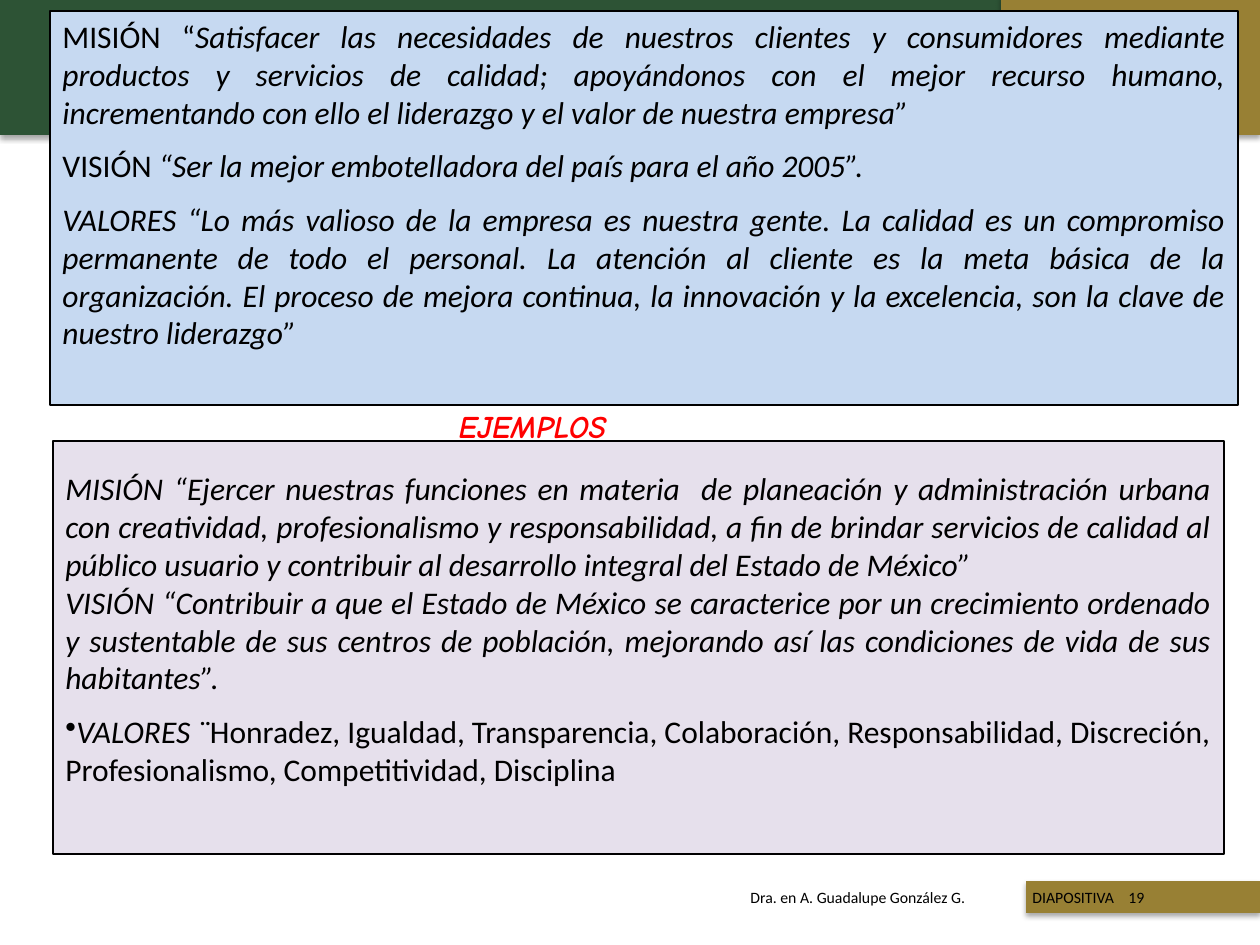
from lxml.etree import SubElement
from pptx import Presentation
from pptx.dml.color import RGBColor
from pptx.enum.shapes import MSO_SHAPE as SHAPE
from pptx.enum.text import MSO_ANCHOR as ANCHOR, PP_ALIGN as ALIGN
from pptx.oxml.ns import qn
from pptx.util import Emu, Pt

SCALE = 914400 / 126
GREEN, OCHRE, BLUE, LILAC = "2D5335", "988034", "C6D9F1", "E6E0EC"
BLACK, RED = "000000", "FF0000"

# Each paragraph: alignment, space before in points, bullet, (text, italic) runs
COMPANY = [
    (ALIGN.JUSTIFY, 9, None, [
        ("MISIÓN “", False),
        ("Satisfacer las necesidades de nuestros clientes y consumidores "
         "mediante productos y servicios de calidad; apoyándonos con el mejor "
         "recurso humano, incrementando con ello el liderazgo y el valor de "
         "nuestra empresa”", True)]),
    (ALIGN.JUSTIFY, 9, None, [
        ("VISIÓN ", False),
        ("“Ser la mejor embotelladora del país para el año 2005”.", True)]),
    (ALIGN.JUSTIFY, 9, None, [
        ("VALORES “Lo más valioso de la empresa es nuestra gente. La calidad "
         "es un compromiso permanente de todo el personal. La atención al "
         "cliente es la meta básica de la organización. El proceso de mejora "
         "continua, la innovación y la excelencia, son la clave de nuestro "
         "liderazgo”", True)]),
]
AGENCY = [
    (ALIGN.JUSTIFY, 0, None, [
        ("MISIÓN “Ejercer nuestras funciones en materia  de planeación y "
         "administración urbana con creatividad, profesionalismo y "
         "responsabilidad, a fin de brindar servicios de calidad al público "
         "usuario y contribuir al desarrollo integral del Estado de México”",
         True)]),
    (ALIGN.JUSTIFY, 0, None, [
        ("VISIÓN “Contribuir a que el Estado de México se caracterice por un "
         "crecimiento ordenado y sustentable de sus centros de población, "
         "mejorando así las condiciones de vida de sus habitantes”.", True)]),
    (ALIGN.LEFT, 9, "•", [
        ("VALORES ¨", True),
        ("Honradez, Igualdad, Transparencia, Colaboración, Responsabilidad, "
         "Discreción, Profesionalismo, Competitividad, Disciplina", False)]),
]


def px(length):
    return Emu(round(length * SCALE))


def color(hex_string):
    return RGBColor.from_string(hex_string)


def style(font, size, hex_string, name="Calibri"):
    font.name, font.size = name, Pt(size)
    font.color.rgb = color(hex_string)


def add_panel(slide, box, fill):
    panel = slide.shapes.add_shape(SHAPE.RECTANGLE, *map(px, box))
    panel.shadow.inherit = False
    panel.fill.solid()
    panel.fill.fore_color.rgb = color(fill)
    panel.line.fill.background()
    return panel


def add_band(slide, box, fill):
    """Plain coloured band with a soft shadow below it."""
    band = add_panel(slide, box, fill)
    effects = band.element.spPr.find(qn("a:effectLst"))
    shadow = SubElement(effects, qn("a:outerShdw"), blurRad=str(Pt(3.1)),
                        dist=str(Pt(1.8)), dir="5400000", rotWithShape="0")
    tint = SubElement(shadow, qn("a:srgbClr"), val=BLACK)
    SubElement(tint, qn("a:alpha"), val="35000")


def add_header(slide, box):
    left, top, width, height = box
    green_width = 1001
    add_band(slide, (left, top, green_width, height), GREEN)
    add_band(slide, (left + green_width, top, width - green_width, height), OCHRE)


def add_footer(slide, box):
    left, top, width, height = box
    band_left = 288
    add_band(slide, (left + band_left, top, width - band_left, height), OCHRE)
    parts = [(0, 270, "Dra. en A. Guadalupe González G."),
             (282, 110, "DIAPOSITIVA"), (378, 50, "19")]
    for offset, part_width, words in parts:
        part = slide.shapes.add_textbox(
            *map(px, (left + offset, top, part_width, height)))
        frame = part.text_frame
        frame.word_wrap = True
        frame.vertical_anchor = ANCHOR.MIDDLE
        line = frame.paragraphs[0]
        line.text = words
        style(line.font, 9, BLACK)


def add_title(slide, box):
    title = slide.shapes.title
    title.left, title.top, title.width, title.height = map(px, box)
    frame = title.text_frame
    frame.vertical_anchor = ANCHOR.TOP
    heading = frame.paragraphs[0]
    heading.text = "EJEMPLOS"
    heading.alignment = ALIGN.LEFT
    style(heading.font, 18, RED, "Comic Neue")
    heading.font.bold = heading.font.italic = True


def add_example(slide, box, fill, statements, anchor, bottom_margin=6):
    """Outlined panel with the mission, vision and values of one organisation."""
    panel = add_panel(slide, box, fill)
    panel.line.color.rgb = color(BLACK)
    panel.line.width = Pt(0.75)
    frame = panel.text_frame
    frame.word_wrap = True
    frame.vertical_anchor = anchor
    frame.margin_bottom = px(bottom_margin)
    for index, (alignment, space, bullet, runs) in enumerate(statements):
        statement = frame.add_paragraph() if index else frame.paragraphs[0]
        statement.alignment = alignment
        statement.space_before = Pt(space)
        style(statement.font, 18, BLACK)
        if bullet:
            SubElement(statement._p.get_or_add_pPr(), qn("a:buChar"), char=bullet)
            # Bullet must precede the default run properties
            properties = statement._p.pPr
            properties.append(properties.find(qn("a:defRPr")))
        for words, italic in runs:
            run = statement.add_run()
            run.text = words
            run.font.italic = italic


def main():
    deck = Presentation()
    deck.slide_width, deck.slide_height = px(1260), px(945)
    slide = deck.slides.add_slide(deck.slide_layouts[5])  # Title Only
    add_header(slide, (0, -5, 1260, 140))
    add_footer(slide, (738, 881, 522, 32))
    add_title(slide, (446, 401, 329, 50))
    add_example(slide, (50, 11, 1188, 394), BLUE, COMPANY, ANCHOR.TOP)
    add_example(slide, (53, 441, 1171, 413), LILAC, AGENCY, ANCHOR.MIDDLE,
                bottom_margin=44)
    deck.save("out.pptx")


if __name__ == "__main__":
    main()
